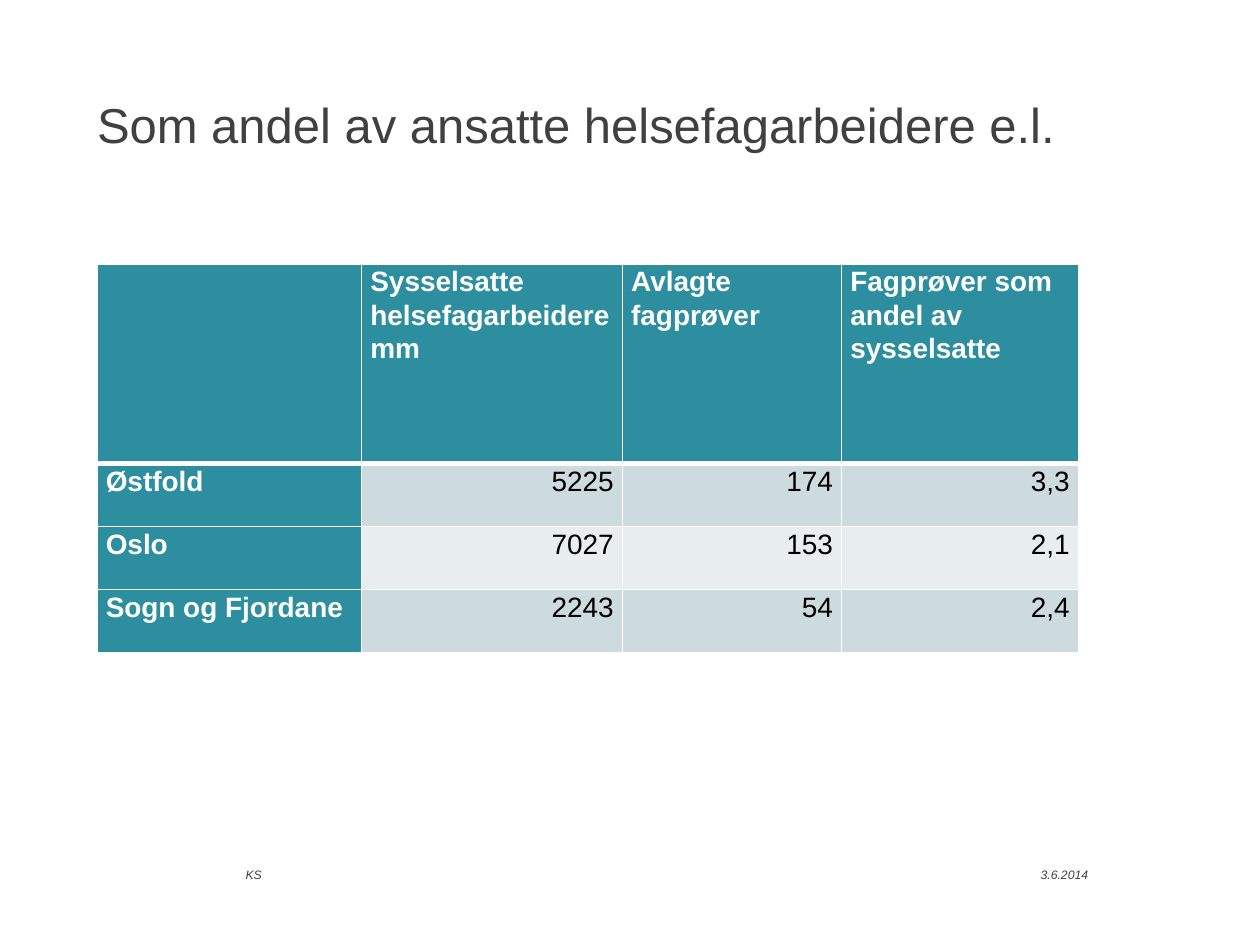
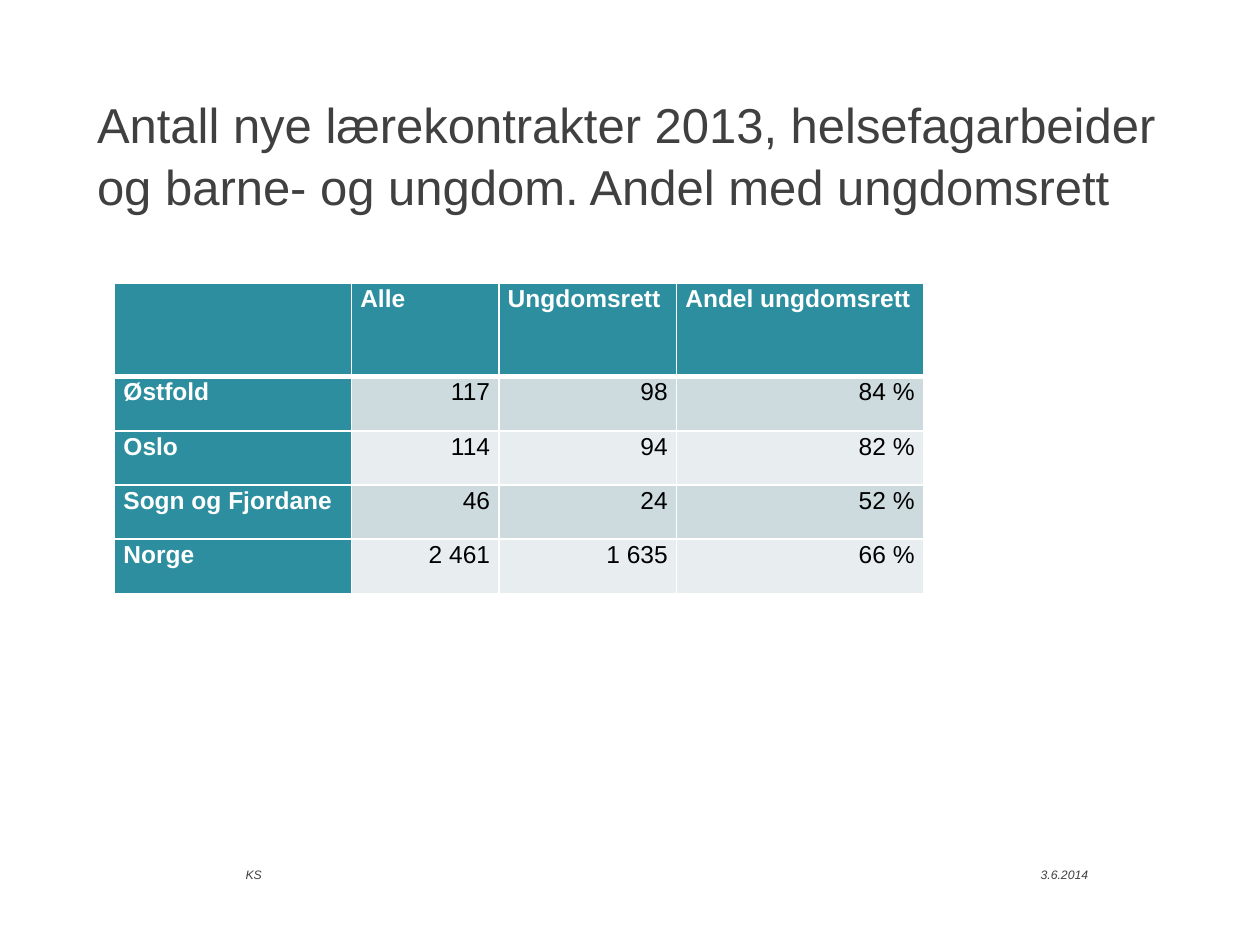
import pptx
import pptx.util
import pptx.dml.color
import pptx.enum.text
import pptx.oxml
from pptx.util import Inches

ALIGN = pptx.enum.text.PP_ALIGN
ANCHOR = pptx.enum.text.MSO_ANCHOR

GREY, TEAL, WHITE, BLACK = "404040", "2D8E9F", "FFFFFF", "000000"
BANDS = ("CDDBDF", "E8EEF0")

TITLE_BOX = (0.77, 0.73, 8.46, 0.4)
FOOTERS = [
    ("3.6.2014", (8.26, 6.88, 0.6, 0.12)),
    ("KS", (1.95, 6.88, 3.17, 0.12)),
]

SLIDES = [
    {
        "title": "Som andel av ansatte helsefagarbeidere e.l.",
        "corner": (0.77, 2.1),
        "columns": (2.1, 2.07, 1.74, 1.88),
        "header_height": 1.58,
        "row_height": 0.5,
        "size": 16,
        "rows": [
            ("", "Sysselsatte helsefagarbeidere mm", "Avlagte fagprøver",
             "Fagprøver som andel av sysselsatte"),
            ("Østfold", "5225", "174", "3,3"),
            ("Oslo", "7027", "153", "2,1"),
            ("Sogn og Fjordane", "2243", "54", "2,4"),
        ],
    },
    {
        "title": "Antall nye lærekontrakter 2013, helsefagarbeider "
                 "og barne- og ungdom. Andel med ungdomsrett",
        "corner": (0.91, 2.25),
        "columns": (1.88, 1.17, 1.41, 1.96),
        "header_height": 0.74,
        "row_height": 0.43,
        "size": 14,
        "rows": [
            ("", "Alle", "Ungdomsrett", "Andel ungdomsrett"),
            ("Østfold", "117", "98", "84 %"),
            ("Oslo", "114", "94", "82 %"),
            ("Sogn og Fjordane", "46", "24", "52 %"),
            ("Norge", "2 461", "1 635", "66 %"),
        ],
    },
]


def rgb(value):
    return pptx.dml.color.RGBColor.from_string(value)


def write(frame, text, size, color=GREY, bold=False, italic=False,
          align=ALIGN.LEFT, anchor=ANCHOR.TOP, spacing=1.0, side=0):
    frame.word_wrap = True
    frame.vertical_anchor = anchor
    frame.margin_left = frame.margin_right = Inches(side)
    frame.margin_top = frame.margin_bottom = 0
    paragraph = frame.paragraphs[0]
    paragraph.alignment = align
    paragraph.line_spacing = spacing
    run = paragraph.add_run()
    run.text = text
    font = run.font
    font.name, font.size = "Arial", pptx.util.Pt(size)
    font.bold, font.italic = bold, italic
    font.color.rgb = rgb(color)


def border(cell, bottom, top):
    properties = cell._tc.get_or_add_tcPr()
    widths = {"lnL": 1, "lnR": 1, "lnT": top, "lnB": bottom}
    for position, (side, width) in enumerate(widths.items()):
        properties.insert(position, pptx.oxml.parse_xml(
            f'<a:{side} xmlns:a="http://schemas.openxmlformats.org/drawingml/2006/main" '
            f'w="{pptx.util.Pt(width)}"><a:solidFill><a:srgbClr val="{WHITE}"/>'
            f'</a:solidFill></a:{side}>'))


def add_figures(slide, content):
    rows, columns = content["rows"], content["columns"]
    heights = [content["header_height"]] + [content["row_height"]] * (len(rows) - 1)
    left, top = content["corner"]
    table = slide.shapes.add_table(
        len(rows), len(columns), Inches(left), Inches(top),
        Inches(sum(columns)), Inches(sum(heights))).table
    table.first_col = True
    for column, width in zip(table.columns, columns):
        column.width = Inches(width)
    for r, (row, height) in enumerate(zip(rows, heights)):
        table.rows[r].height = Inches(height)
        for c, text in enumerate(row):
            cell = table.cell(r, c)
            heading = r == 0 or c == 0
            cell.fill.solid()
            cell.fill.fore_color.rgb = rgb(TEAL if heading else BANDS[(r - 1) % 2])
            border(cell, bottom=3 if r == 0 else 1, top=3 if r == 1 else 1)
            cell.margin_left = cell.margin_right = Inches(0.07)
            cell.margin_top = cell.margin_bottom = 0
            if text:
                write_cell(cell, text, content["size"], heading)


def write_cell(cell, text, size, heading):
    write(cell.text_frame, text, size, color=WHITE if heading else BLACK,
          bold=heading, align=ALIGN.LEFT if heading else ALIGN.RIGHT,
          spacing=1.07, side=0.07)


def build(deck, content):
    slide = deck.slides.add_slide(deck.slide_layouts[5])
    title = slide.shapes.title
    title.left, title.top, title.width, title.height = map(Inches, TITLE_BOX)
    title.text_frame.auto_size = pptx.enum.text.MSO_AUTO_SIZE.NONE
    write(title.text_frame, content["title"], 28, spacing=1.05)
    add_figures(slide, content)
    for text, box in FOOTERS:
        footer = slide.shapes.add_textbox(*map(Inches, box))
        write(footer.text_frame, text, 7, italic=True, anchor=ANCHOR.MIDDLE)


def main():
    deck = pptx.Presentation()
    deck.slide_width, deck.slide_height = Inches(10), Inches(7.5)
    for content in SLIDES:
        build(deck, content)
    deck.save("out.pptx")


if __name__ == "__main__":
    main()
